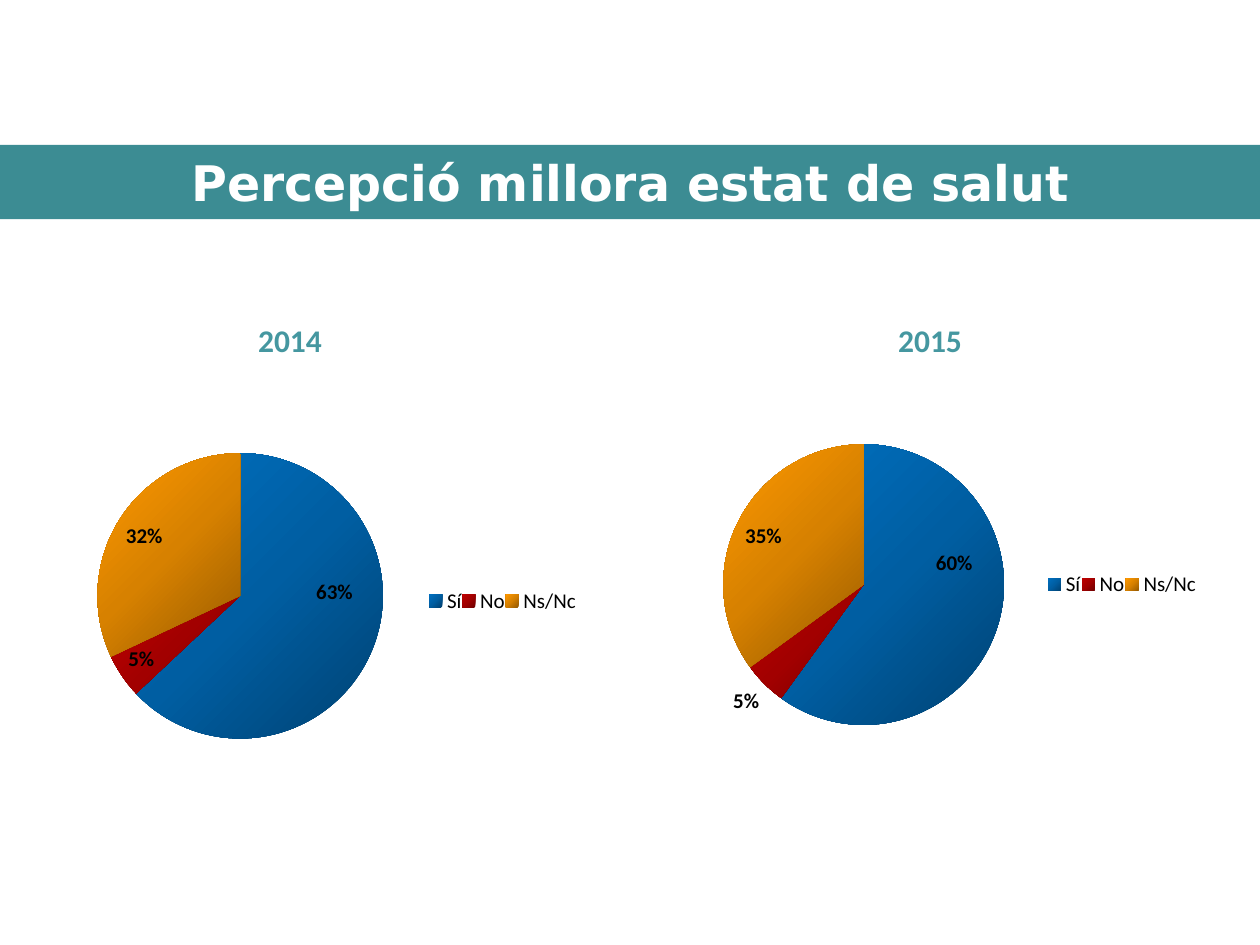
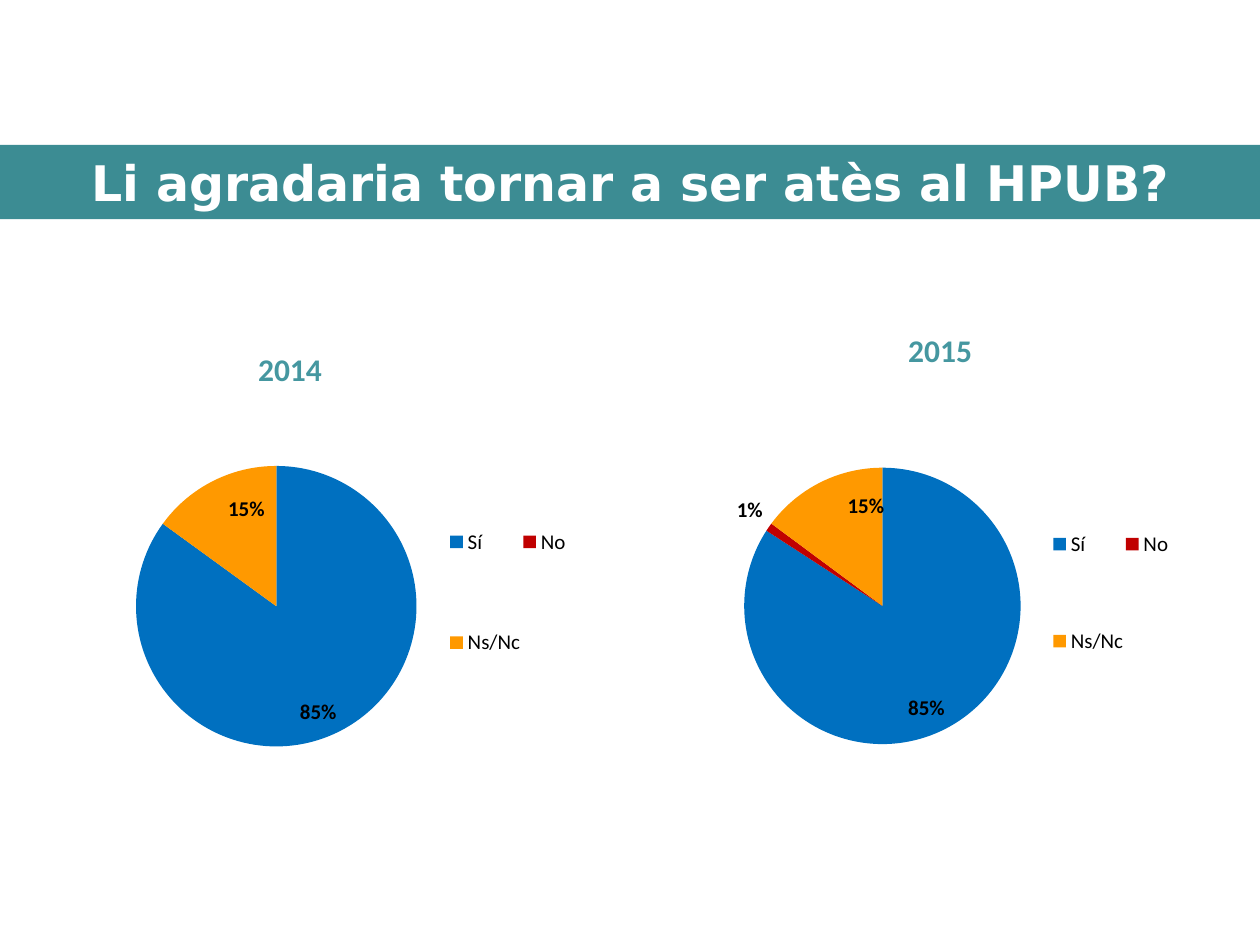
import copy
from dataclasses import dataclass

import lxml.etree
import pptx
import pptx.chart.data
import pptx.dml.color
import pptx.enum.chart
import pptx.enum.shapes
import pptx.enum.text
import pptx.oxml.ns
import pptx.util

Inches = pptx.util.Inches
Pt = pptx.util.Pt
RGB = pptx.dml.color.RGBColor.from_string
LabelPosition = pptx.enum.chart.XL_LABEL_POSITION
qn = pptx.oxml.ns.qn


@dataclass(frozen=True)
class Theme:
    band: str = "3C8C93"
    year: str = "4597A0"
    white: str = "FFFFFF"
    black: str = "000000"
    answers: tuple = ("0070C0", "C00000", "FF9900")
    shades: tuple = (
        ("004272", "005EA2", "0070C0"),
        ("720000", "A20000", "C00000"),
        ("975B00", "D78100", "FF9900"),
    )
    title_font: str = "DejaVu Sans"
    body_font: str = "Calibri"
    title_size: int = 28
    year_size: int = 18
    chart_size: int = 12


THEME = Theme()
ANSWERS = ("Sí", "No", "Ns/Nc")

# Moved labels: answer index -> (outside the pie, x shift, y shift)
QUESTIONS = [
    {
        "title": "Percepció millora estat de salut",
        "shaded": True,
        "legend": (0.7, 0.42, 0.26, 0.08),
        "pies": [
            {"year": "2014", "year_at": (1.95, 2.5), "at": (0.23, 2.97, 4.53, 3.91),
             "plot": (0.12, 0.16, 0.5, 0.58), "values": (63, 5, 32),
             "moved": {0: (False, -0.02, -0.09)}},
            {"year": "2015", "year_at": (7.03, 2.5), "at": (5.08, 2.81, 4.61, 3.98),
             "plot": (0.14, 0.18, 0.49, 0.56), "values": (60, 5, 35),
             "moved": {0: (False, -0.03, -0.1), 1: (True, 0, 0)}},
        ],
    },
    {
        "title": "Li agradaria tornar a ser atès al HPUB?",
        "shaded": False,
        "legend": (0.7, 0.15, 0.2, 0.6),
        "pies": [
            {"year": "2014", "year_at": (1.95, 2.73), "at": (0.16, 3.05, 4.84, 3.67),
             "plot": (0.19, 0.08, 0.46, 0.8), "values": (85, None, 15),
             "moved": {2: (False, 0.02, 0.02)}},
            {"year": "2015", "year_at": (7.11, 2.58), "at": (5, 3.12, 4.77, 3.52),
             "plot": (0.19, 0.08, 0.46, 0.8), "values": (85, 1, 15),
             "moved": {1: (True, 0, 0), 2: (False, 0.04, 0.01)}},
        ],
    },
]


def style_font(font, **values):
    for name, value in values.items():
        if name == "color":
            font.color.rgb = RGB(value)
        else:
            setattr(font, name, value)


def place(element, index, settings):
    """Give a chart part a manual layout as its child number index."""
    for old in element.findall(qn("c:layout")):
        element.remove(old)
    layout = lxml.etree.Element(qn("c:layout"))
    manual = lxml.etree.SubElement(layout, qn("c:manualLayout"))
    for tag, value in settings.items():
        lxml.etree.SubElement(manual, qn(f"c:{tag}"), val=str(value))
    element.insert(index, layout)


deck = pptx.Presentation()
deck.slide_width = Inches(10)
deck.slide_height = Inches(7.5)

for question in QUESTIONS:
    slide = deck.slides.add_slide(deck.slide_layouts[6])

    band = slide.shapes.add_shape(
        pptx.enum.shapes.MSO_SHAPE.RECTANGLE, 0, Inches(1.15), Inches(10), Inches(0.59))
    band.shadow.inherit = False
    band.fill.solid()
    band.fill.fore_color.rgb = RGB(THEME.band)
    band.line.fill.background()
    band.text_frame.vertical_anchor = pptx.enum.text.MSO_ANCHOR.MIDDLE
    heading = band.text_frame.paragraphs[0]
    heading.text = question["title"]
    heading.alignment = pptx.enum.text.PP_ALIGN.CENTER
    style_font(heading.font, name=THEME.title_font, size=Pt(THEME.title_size),
               bold=True, color=THEME.white)

    for pie in question["pies"]:
        # Rounded shares that miss 100 are shown as given
        by_percent = sum(value or 0 for value in pie["values"]) == 100
        label_format = "0%" if by_percent else '0"%"'
        answers = pptx.chart.data.CategoryChartData()
        answers.categories = ANSWERS
        answers.add_series("Series 1", pie["values"])
        chart = slide.shapes.add_chart(
            pptx.enum.chart.XL_CHART_TYPE.PIE, *map(Inches, pie["at"]), answers).chart
        chart.has_title = False
        style_font(chart.font, name=THEME.body_font, size=Pt(THEME.chart_size),
                   color=THEME.black)
        chart.plots[0].vary_by_categories = True

        plot_area = chart.plots[0]._element.getparent()
        place(plot_area, 0, {"layoutTarget": "inner", "xMode": "edge", "yMode": "edge",
                             **dict(zip("xywh", pie["plot"]))})

        chart.has_legend = True
        chart.legend.position = pptx.enum.chart.XL_LEGEND_POSITION.RIGHT
        chart.legend.include_in_layout = False
        style_font(chart.legend.font, name=THEME.body_font, size=Pt(THEME.chart_size))
        place(chart.legend._element, 1, {"xMode": "edge", "yMode": "edge",
                                         **dict(zip("xywh", question["legend"]))})

        series = chart.plots[0].series[0]
        for index, color in enumerate(THEME.answers):
            fill = series.points[index].format.fill
            if not question["shaded"]:
                fill.solid()
                fill.fore_color.rgb = RGB(color)
                continue
            fill.gradient()
            fill.gradient_angle = 135
            stop_list = series._element.xpath("c:dPt[last()]//a:gsLst")[0]
            stop_list.insert(1, copy.deepcopy(stop_list[0]))
            for stop, position, shade in zip(
                    fill.gradient_stops, (0, 0.5, 1), THEME.shades[index]):
                stop.position = position
                stop.color.rgb = RGB(shade)

        labels = series.data_labels
        labels.show_percentage = by_percent
        labels.show_value = not by_percent
        labels.number_format = label_format
        labels.number_format_is_linked = False
        labels.position = LabelPosition.INSIDE_END
        label_font = dict(name=THEME.body_font, size=Pt(THEME.chart_size),
                          bold=True, color=THEME.black)
        style_font(labels.font, **label_font)

        for index, (outside, shift_x, shift_y) in pie["moved"].items():
            label = series.points[index].data_label
            style_font(label.font, **label_font)
            label.position = (LabelPosition.OUTSIDE_END if outside
                              else LabelPosition.INSIDE_END)
            element = series._element.xpath(f".//c:dLbl[c:idx/@val='{index}']")[0]
            element.find(qn("c:showVal")).set("val", str(int(not by_percent)))
            element.find(qn("c:showPercent")).set("val", str(int(by_percent)))
            place(element, 1, {"x": shift_x, "y": shift_y})
            element.insert(2, lxml.etree.Element(
                qn("c:numFmt"), formatCode=label_format, sourceLinked="0"))

    for pie in question["pies"]:
        year_box = slide.shapes.add_textbox(
            *map(Inches, pie["year_at"]), Inches(1.41), Inches(0.4))
        year_box.text_frame.word_wrap = True
        year = year_box.text_frame.paragraphs[0]
        year.text = pie["year"]
        style_font(year.font, name=THEME.body_font, size=Pt(THEME.year_size),
                   bold=True, color=THEME.year)

deck.save("out.pptx")
